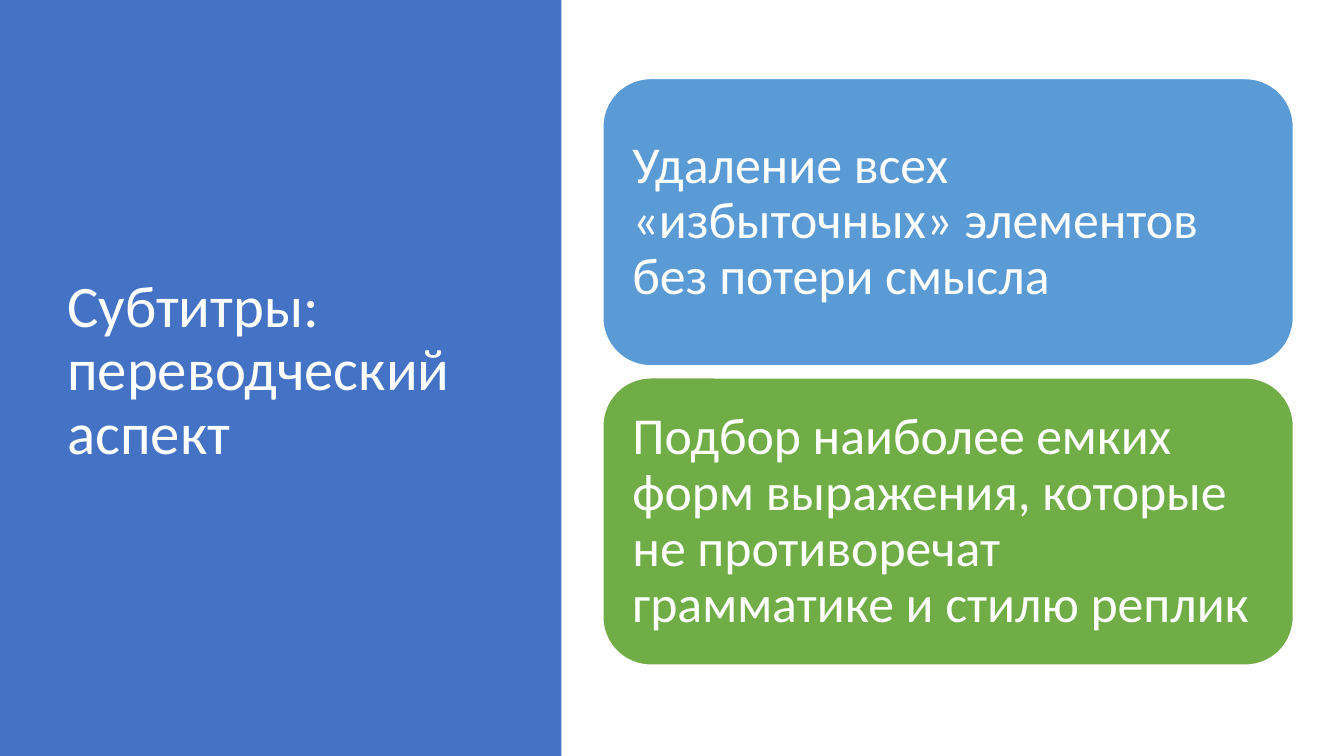
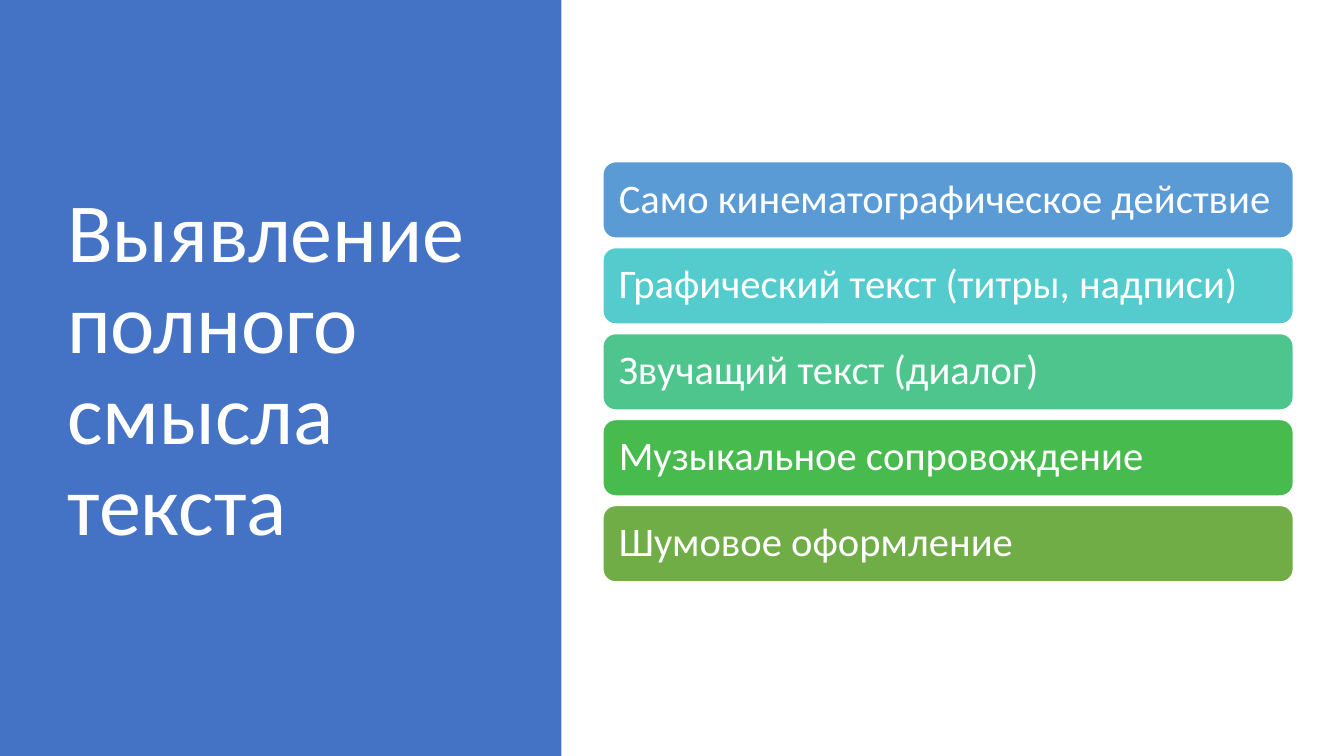
from dataclasses import dataclass

from pptx import Presentation
from pptx.dml.color import RGBColor
from pptx.enum.shapes import MSO_SHAPE as Shape
from pptx.enum.text import MSO_ANCHOR as Anchor, PP_ALIGN as Align
from pptx.util import Pt

# Shared style
FONT = "Calibri"
WHITE, BLUE = "FFFFFF", "4472C4"
SKY, AQUA, MINT, GREEN, OLIVE = "5B9BD5", "54CCCD", "4DC58D", "48BB4F", "70AD47"

# Shared layout, in points
SLIDE_W, SLIDE_H = 960, 540
PANEL_W = 401
TITLE_X, TITLE_W, TITLE_H = 41, 299.5, 433.4
CARD_X, CARD_W = 430.6, 493.2
CENTER_Y = 265.6
INSET_RATIO = 0.3  # card text inset relative to the font size


@dataclass
class Card:
    text: str
    color: str


@dataclass
class Page:
    title: str
    title_size: float
    card_size: float
    card_height: float
    gap: float
    cards: list[Card]


PAGES = [
    Page("Субтитры: переводческий аспект", 42, 37, 205.2, 8.6, [
        Card("Удаление всех «избыточных» элементов без потери смысла", SKY),
        Card("Подбор наиболее емких форм выражения, которые не противоречат "
             "грамматике и стилю реплик", OLIVE),
    ]),
    Page("Выявление полного смысла текста", 60, 29, 54.6, 6.8, [
        Card("Само кинематографическое действие", SKY),
        Card("Графический текст (титры, надписи)", AQUA),
        Card("Звучащий текст (диалог)", MINT),
        Card("Музыкальное сопровождение", GREEN),
        Card("Шумовое оформление", OLIVE),
    ]),
]


def rgb(color: str) -> RGBColor:
    return RGBColor.from_string(color)


def set_text(sp, text: str, size: float) -> None:
    tf = sp.text_frame
    tf.word_wrap = True
    tf.vertical_anchor = Anchor.MIDDLE
    tf.text = text
    p = tf.paragraphs[0]
    p.alignment = Align.LEFT
    p.line_spacing = 0.9
    font = p.runs[0].font
    font.name, font.size = FONT, Pt(size)
    font.color.rgb = rgb(WHITE)


def add_box(s, kind: Shape, x: float, y: float, w: float, h: float, color: str):
    sp = s.shapes.add_shape(kind, Pt(x), Pt(y), Pt(w), Pt(h))
    sp.shadow.inherit = False
    sp.fill.solid()
    sp.fill.fore_color.rgb = rgb(color)
    sp.line.fill.background()
    return sp


def add_title_panel(s, title: str, size: float) -> None:
    add_box(s, Shape.RECTANGLE, 0, 0, PANEL_W, SLIDE_H, BLUE)
    sp = s.shapes.add_textbox(Pt(TITLE_X), Pt(CENTER_Y - TITLE_H / 2),
                              Pt(TITLE_W), Pt(TITLE_H))
    set_text(sp, title, size)


def add_card(s, card: Card, y: float, height: float, size: float) -> None:
    sp = add_box(s, Shape.ROUNDED_RECTANGLE, CARD_X, y, CARD_W, height, card.color)
    sp.line.color.rgb = rgb(WHITE)
    sp.line.width = Pt(1)
    tf = sp.text_frame
    inset = Pt(size * INSET_RATIO)
    tf.margin_left = tf.margin_right = tf.margin_top = tf.margin_bottom = inset
    set_text(sp, card.text, size)


def add_page(prs, page: Page) -> None:
    s = prs.slides.add_slide(prs.slide_layouts[6])
    add_title_panel(s, page.title, page.title_size)
    # Stack of cards, centred vertically
    pitch = page.card_height + page.gap
    top = CENTER_Y - (len(page.cards) * pitch - page.gap) / 2
    for i, card in enumerate(page.cards):
        add_card(s, card, top + i * pitch, page.card_height, page.card_size)


def main() -> None:
    prs = Presentation()
    prs.slide_width, prs.slide_height = Pt(SLIDE_W), Pt(SLIDE_H)
    for page in PAGES:
        add_page(prs, page)
    prs.save("out.pptx")


if __name__ == "__main__":
    main()
